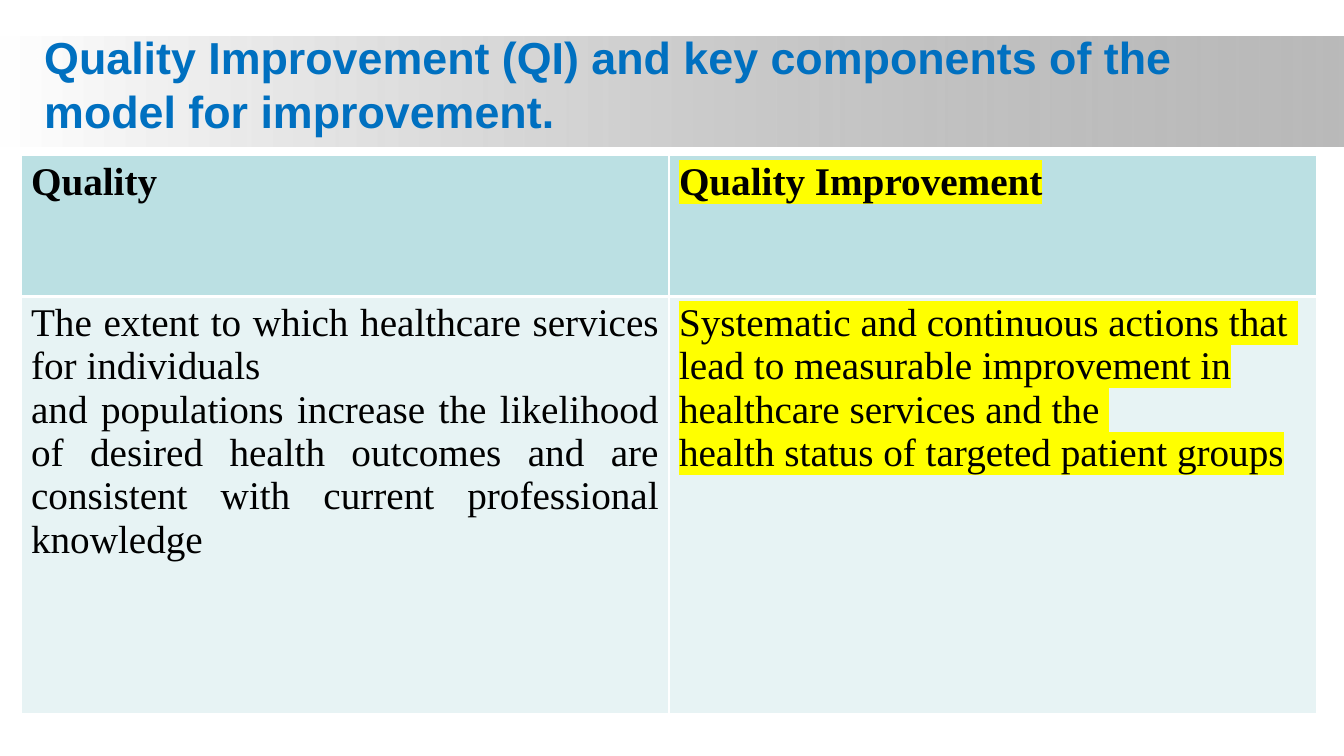
from dataclasses import dataclass
from typing import Any

from lxml.etree import SubElement
from pptx import Presentation
from pptx.dml.color import RGBColor
from pptx.enum.shapes import MSO_SHAPE
from pptx.enum.text import MSO_ANCHOR, MSO_AUTO_SIZE, PP_ALIGN
from pptx.oxml import parse_xml
from pptx.oxml.ns import nsdecls, qn
from pptx.util import Cm, Pt

WHITE, BLACK, BLUE, GREY = "FFFFFF", "000000", "0070C0", "808080"
TEAL, PALE, YELLOW = "BBE0E3", "E7F3F4", "FFFF00"


@dataclass
class Entry:
    row: int
    col: int
    lines: list[str]
    mark: bool = False
    align: PP_ALIGN = PP_ALIGN.LEFT


ENTRIES = [
    Entry(0, 0, ["Quality"]),
    Entry(0, 1, ["Quality Improvement"], mark=True),
    Entry(1, 0, [
        "The extent to which healthcare services for individuals",
        "and populations increase the likelihood of desired health outcomes "
        "and are consistent with current professional knowledge",
    ], align=PP_ALIGN.JUSTIFY),
    Entry(1, 1, [
        "Systematic and continuous actions that ",
        "lead to measurable improvement in healthcare services and the ",
        "health status of targeted patient groups",
    ], mark=True),
]
FILLS = [TEAL, PALE]
ROWS = [Cm(3.56), Cm(10.52)]
# Line widths in points; the rule between the two rows is the heavy one
EDGES = [{"L": 1, "R": 1, "T": 1, "B": 3}, {"L": 1, "R": 1, "T": 3, "B": 1}]


def paint(color: Any, value: str) -> None:
    color.rgb = RGBColor.from_string(value)


def style(target: Any, values: dict[str, Any]) -> None:
    for name, value in values.items():
        setattr(target, name, value)


def write(para: Any, text: str, look: dict[str, Any], color: str) -> Any:
    run = para.add_run()
    run.text = text
    style(run.font, look)
    paint(run.font.color, color)
    return run


def mark(run: Any) -> None:
    tag = parse_xml(f'<a:highlight {nsdecls("a")}><a:srgbClr val="{YELLOW}"/></a:highlight>')
    run.font.fill  # the highlight sits between fill and typeface
    run._r.rPr.find(qn("a:latin")).addprevious(tag)


def edge(cell: Any, widths: dict[str, int]) -> None:
    props = cell._tc.get_or_add_tcPr()
    for side, width in widths.items():
        props.append(parse_xml(
            f'<a:ln{side} {nsdecls("a")} w="{Pt(width)}"><a:solidFill>'
            f'<a:srgbClr val="{WHITE}"/></a:solidFill></a:ln{side}>'))


def draw_band(slide: Any) -> None:
    band = slide.shapes.add_shape(MSO_SHAPE.RECTANGLE, 0, Cm(0.91), Cm(33.87), Cm(2.79))
    band.shadow.inherit = False
    band.line.fill.background()
    band.fill.gradient()
    band.fill.gradient_angle = 0
    for stop, value, place in zip(band.fill.gradient_stops, (WHITE, GREY), (0, 1)):
        paint(stop.color, value)
        stop.position = place
    tint = list(band.element.iter(qn("a:srgbClr")))[-1]
    SubElement(tint, qn("a:alpha"), val="54000")
    slide.shapes.title.element.addprevious(band.element)


def draw_title(slide: Any) -> None:
    title = slide.shapes.title
    style(title, {"left": Cm(0.86), "top": Cm(0.76), "width": Cm(32.11), "height": Cm(3.94)})
    style(title.text_frame, {"word_wrap": True, "auto_size": MSO_AUTO_SIZE.NONE,
                             "vertical_anchor": MSO_ANCHOR.TOP, "margin_top": 0})
    para = title.text_frame.paragraphs[0]
    para.alignment = PP_ALIGN.LEFT
    write(para, "Quality Improvement (QI) and key components of the model for improvement.",
          {"name": "Arial", "size": Pt(32), "bold": True}, BLUE)


def draw_table(slide: Any) -> None:
    grid = slide.shapes.add_table(2, 2, Cm(0.53), Cm(3.91), Cm(32.66), sum(ROWS)).table
    style(grid, {"first_row": False, "horz_banding": False})
    for row, height in zip(grid.rows, ROWS):
        row.height = height
    for entry in ENTRIES:
        cell = grid.cell(entry.row, entry.col)
        edge(cell, EDGES[entry.row])
        cell.fill.solid()
        paint(cell.fill.fore_color, FILLS[entry.row])
        look = {"name": "Times New Roman", "size": Pt(28), "bold": entry.row == 0}
        frame = cell.text_frame
        for i, line in enumerate(entry.lines):
            para = frame.add_paragraph() if i else frame.paragraphs[0]
            para.alignment = entry.align
            run = write(para, line, look, BLACK)
            if entry.mark:
                mark(run)


def main() -> None:
    deck = Presentation()
    style(deck, {"slide_width": Cm(33.87), "slide_height": Cm(19.05)})
    slide = deck.slides.add_slide(deck.slide_layouts[5])
    # Heading
    draw_band(slide)
    draw_title(slide)
    # Comparison
    draw_table(slide)
    deck.save("out.pptx")


if __name__ == "__main__":
    main()
